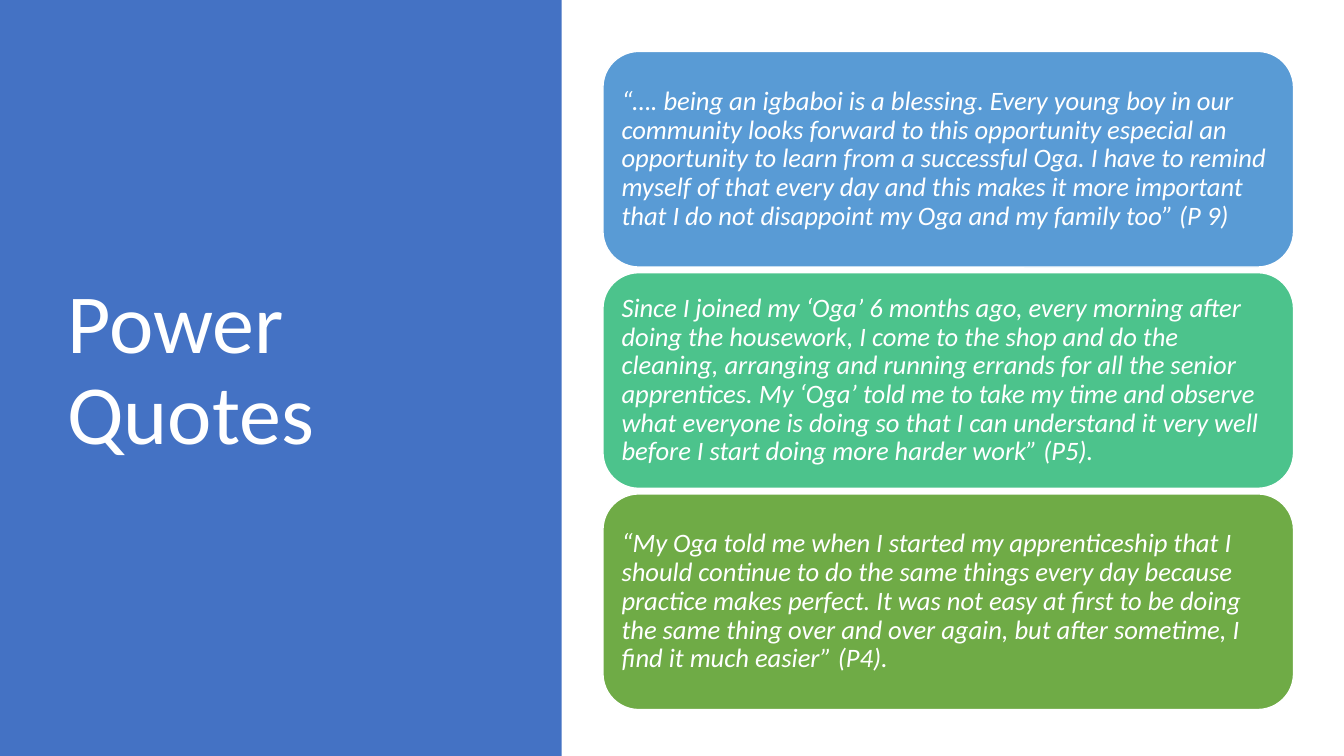
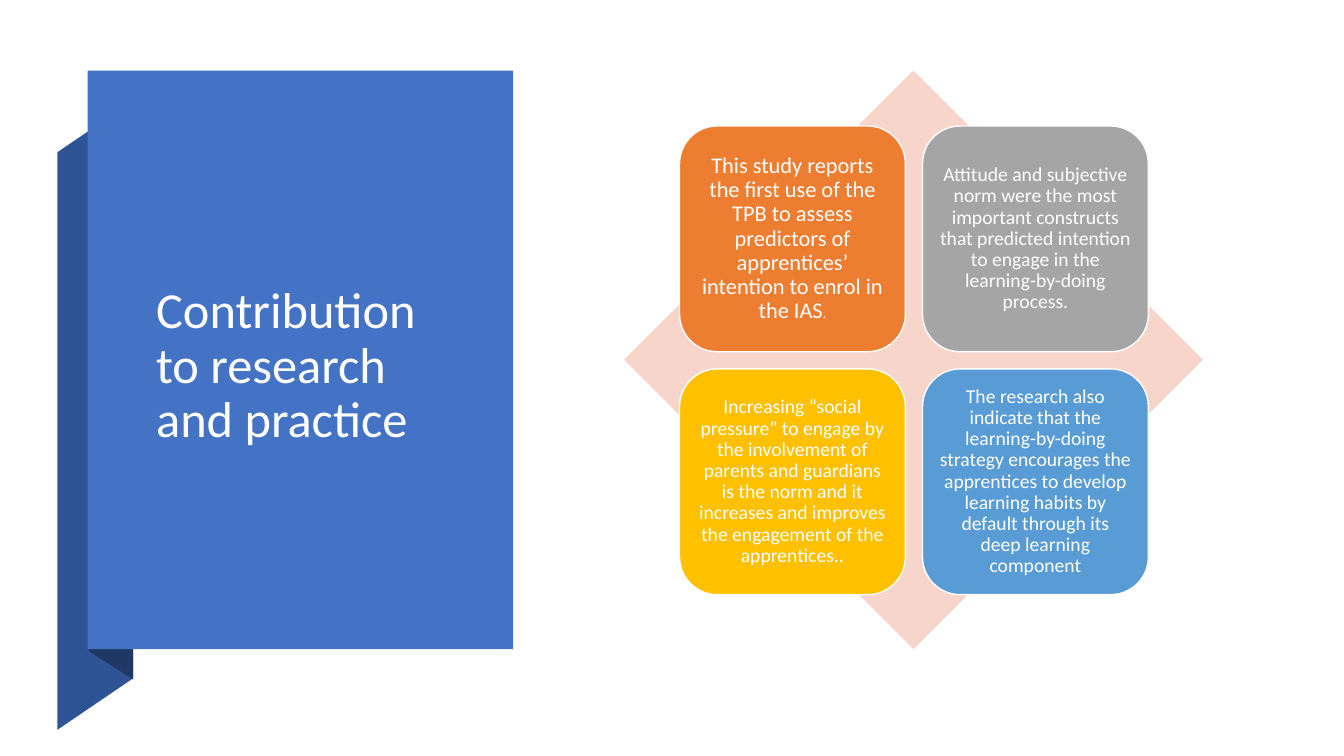
from pptx import Presentation
from pptx.dml.color import RGBColor
from pptx.enum.shapes import MSO_SHAPE as Shape
from pptx.enum.text import MSO_ANCHOR as Anchor, PP_ALIGN as Align
from pptx.util import Inches, Pt

FONT = "Calibri"
WHITE, BLUE, SKY = "FFFFFF", "4472C4", "599BD5"
TITLE_STYLE = {"margins": (0.1, 0.05), "align": Align.LEFT}
QUOTE_STYLE = {"margins": (0.08, 0.08), "align": Align.LEFT, "italic": True}
CARD_STYLE = {"margins": (0.06, 0.06), "align": Align.CENTER}


def paint(shape, fill, line=None):
    """Give a shape a flat fill and an optional 1 pt outline."""
    shape.shadow.inherit = False
    shape.fill.solid()
    shape.fill.fore_color.rgb = RGBColor.from_string(fill)
    if line:
        shape.line.color.rgb = RGBColor.from_string(line)
        shape.line.width = Pt(1)
    else:
        shape.line.fill.background()


def write(shape, runs, margins, align, italic=False):
    """Fill a shape with one white paragraph of (text, size) runs."""
    frame = shape.text_frame
    horizontal, vertical = map(Inches, margins)
    frame_format = {
        "word_wrap": True, "vertical_anchor": Anchor.MIDDLE,
        "margin_left": horizontal, "margin_right": horizontal,
        "margin_top": vertical, "margin_bottom": vertical,
    }
    for name, value in frame_format.items():
        setattr(frame, name, value)
    paragraph = frame.paragraphs[0]
    paragraph.alignment = align
    paragraph.line_spacing = 0.9
    for text, size in runs:
        run = paragraph.add_run()
        run.text = text
        for name, value in {"name": FONT, "size": Pt(size), "italic": italic}.items():
            setattr(run.font, name, value)
        run.font.color.rgb = RGBColor.from_string(WHITE)


presentation = Presentation()
presentation.slide_width = Inches(13.33)
presentation.slide_height = Inches(7.5)
blank = presentation.slide_layouts[6]

# Slide 1: three stacked quotes
slide = presentation.slides.add_slide(blank)
panel = slide.shapes.add_shape(Shape.RECTANGLE, 0, 0, Inches(5.57), Inches(7.5))
paint(panel, BLUE)
title = slide.shapes.add_textbox(Inches(0.57), Inches(0.68), Inches(4.16), Inches(6.02))
write(title, [("Power Quotes", 60)], **TITLE_STYLE)

quotes = [
    (SKY, "“…. being an igbaboi is a blessing. Every young boy in our community looks "
     "forward to this opportunity especial an opportunity to learn from a successful Oga. "
     "I have to remind myself of that every day and this makes it more important that I do "
     "not disappoint my Oga and my family too” (P 9)"),
    ("4CC38C", "Since I joined my ‘Oga’ 6 months ago, every morning after doing the "
     "housework, I come to the shop and do the cleaning, arranging and running errands for "
     "all the senior apprentices. My ‘Oga’ told me to take my time and observe what "
     "everyone is doing so that I can understand it very well before I start doing more "
     "harder work” (P5)."),
    ("6FAB46", "“My Oga told me when I started my apprenticeship that I should continue to "
     "do the same things every day because practice makes perfect. It was not easy at first "
     "to be doing the same thing over and over again, but after sometime, I find it much "
     "easier” (P4)."),
]
QUOTE_HEIGHT, QUOTE_GAP = 2.14, 0.055
for index, (color, text) in enumerate(quotes):
    top = 0.51 + index * (QUOTE_HEIGHT + QUOTE_GAP)
    quote = slide.shapes.add_shape(Shape.ROUNDED_RECTANGLE, Inches(5.98), Inches(top),
                                   Inches(6.85), Inches(QUOTE_HEIGHT))
    paint(quote, color, WHITE)
    write(quote, [(text, 19)], **QUOTE_STYLE)

# Slide 2: folded ribbon with the title, four cards on a diamond
slide = presentation.slides.add_slide(blank)
ribbon_parts = [
    ("2F5496", [(0.57, 7.24), (1.32, 6.73), (1.32, 1), (0.57, 1.51)]),
    ("1F3864", [(0.88, 6.46), (1.32, 6.74), (1.32, 0.99), (0.88, 0.7)]),
]
for color, points in ribbon_parts:
    corners = [(Inches(x), Inches(y)) for x, y in points]
    builder = slide.shapes.build_freeform(*corners[0])
    builder.add_line_segments(corners[1:], close=True)
    paint(builder.convert_to_shape(), color)

panel = slide.shapes.add_shape(Shape.RECTANGLE, Inches(0.87), Inches(0.7),
                               Inches(4.22), Inches(5.74))
paint(panel, BLUE)
title = slide.shapes.add_textbox(Inches(1.45), Inches(1.67), Inches(3.01), Inches(3.94))
write(title, [("Contribution to research and practice", 36)], **TITLE_STYLE)

diamond = slide.shapes.add_shape(Shape.DIAMOND, Inches(6.19), Inches(0.7),
                                 Inches(5.74), Inches(5.74))
paint(diamond, "F7D5CB")

cards = [
    ("ED7D31", [("This study reports the first use of the TPB to assess predictors of "
                 "apprentices’ intention to enrol in the IAS", 16), (".", 10)]),
    ("A5A5A5", [("Attitude and subjective norm were the most important constructs that "
                 "predicted intention to engage in the learning-by-doing process.", 14)]),
    ("FFC000", [("Increasing “social pressure” to engage by the involvement of parents and "
                 "guardians is the norm and it increases and improves the engagement of the "
                 "apprentices..", 14)]),
    (SKY, [("The research also indicate that the learning-by-doing strategy encourages the "
            "apprentices to develop learning habits by default through its deep learning "
            "component", 14)]),
]
CARD_SIZE, CARD_GAP = 2.24, 0.17
for index, (color, runs) in enumerate(cards):
    row, column = divmod(index, 2)
    left = 6.74 + column * (CARD_SIZE + CARD_GAP)
    top = 1.25 + row * (CARD_SIZE + CARD_GAP)
    card = slide.shapes.add_shape(Shape.ROUNDED_RECTANGLE, Inches(left), Inches(top),
                                  Inches(CARD_SIZE), Inches(CARD_SIZE))
    paint(card, color, WHITE)
    write(card, runs, **CARD_STYLE)

presentation.save("out.pptx")
